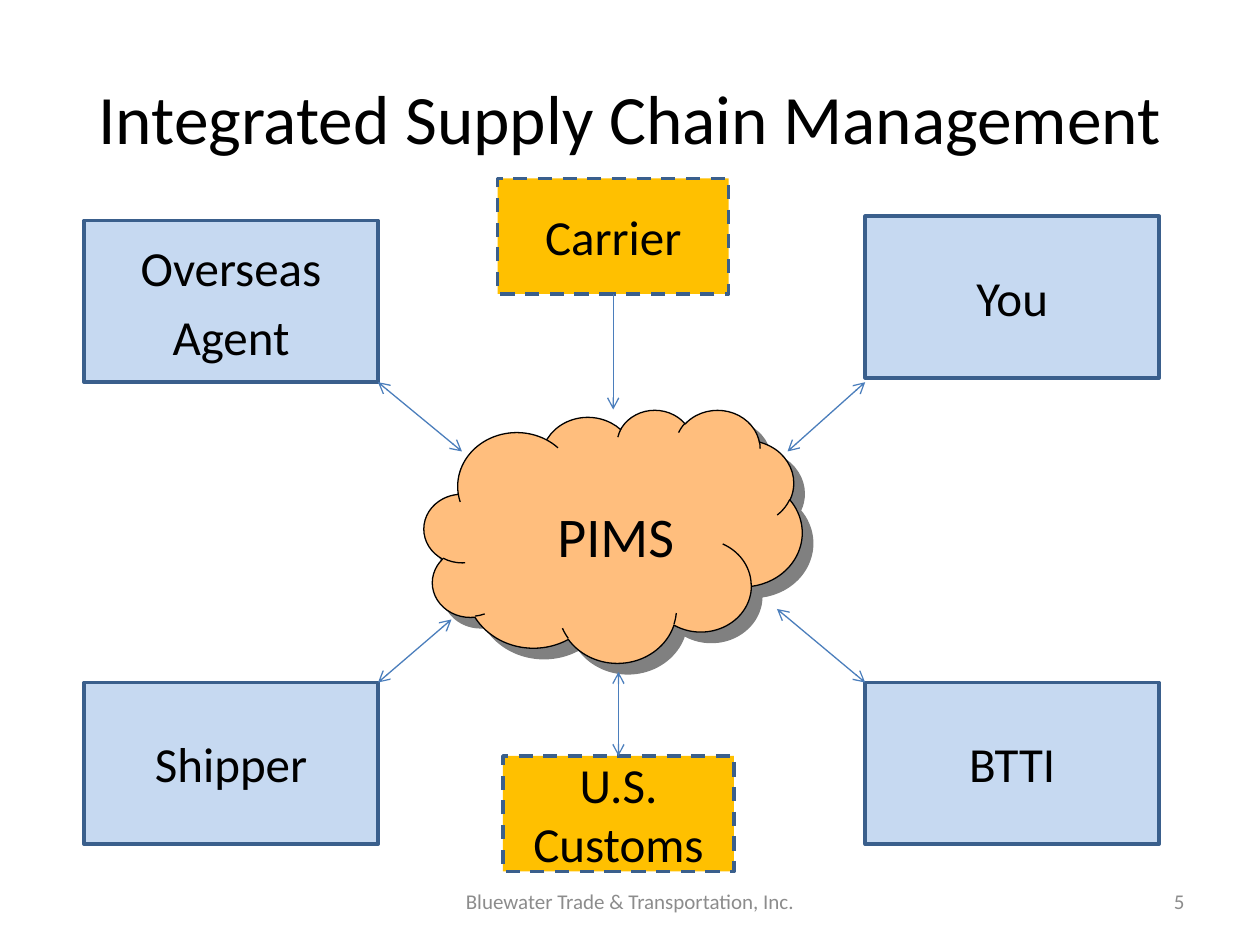
from dataclasses import dataclass
from typing import Optional

from lxml.etree import SubElement
from pptx import Presentation
from pptx.dml.color import RGBColor
from pptx.enum.dml import MSO_LINE
from pptx.enum.shapes import MSO_CONNECTOR, MSO_SHAPE
from pptx.enum.text import MSO_ANCHOR, PP_ALIGN as Align
from pptx.oxml.ns import qn
from pptx.util import Inches, Pt

COLUMNS, ROWS = 120, 90
TOP, BOTTOM = 0, 2


@dataclass(frozen=True)
class Theme:
    font: str = "Calibri"
    ink: str = "000000"
    muted: str = "8C8C8C"
    partner: str = "C6D9F1"
    outside: str = "FFC000"
    border: str = "3A5F8C"
    arrow: str = "4B7EBC"
    cloud: str = "FFBE7D"
    shadow: str = "808080"
    title_size: float = 39.6
    hub_size: float = 32
    box_size: float = 28
    footer_size: float = 12
    border_width: float = 2
    thin_width: float = 0.75


@dataclass(frozen=True)
class Area:
    """A rectangle in grid columns and rows."""
    column: float
    row: float
    width: float
    height: float


@dataclass(frozen=True)
class Party:
    lines: tuple[str, ...]
    area: Area
    outside: bool = False


@dataclass(frozen=True)
class Link:
    """An arrow from a party to the cloud, in grid columns and rows."""
    start: tuple[float, float]
    end: tuple[float, float]
    both_ways: bool = True
    party: Optional[str] = None
    side: int = TOP


@dataclass(frozen=True)
class Caption:
    text: str
    area: Area
    size: float
    color: str
    align: Align = Align.CENTER
    anchor: MSO_ANCHOR = MSO_ANCHOR.MIDDLE


THEME = Theme()
LEFT, RIGHT, LOWER = 8, 82.4, 65
PARTNER_WIDTH, PARTNER_HEIGHT = 28, 15.4
CLOUD = Area(40.4, 39, 36, 24.1)

PARTIES = (
    Party(("You",), Area(RIGHT, 20.6, PARTNER_WIDTH, PARTNER_HEIGHT)),
    Party(("Overseas", "Agent"), Area(LEFT, 21, PARTNER_WIDTH, PARTNER_HEIGHT)),
    Party(("Shipper",), Area(LEFT, LOWER, PARTNER_WIDTH, PARTNER_HEIGHT)),
    Party(("BTTI",), Area(RIGHT, LOWER, PARTNER_WIDTH, PARTNER_HEIGHT)),
    Party(("Carrier",), Area(47.4, 17, 22, 11), outside=True),
    Party(("U.S. Customs",), Area(47.9, 72, 22, 11), outside=True),
)
LINKS = (
    Link((58.4, 28), (58.4, 39), both_ways=False, party="Carrier", side=BOTTOM),
    Link((58.9, 72), (58.9, 64), party="U.S. Customs", side=TOP),
    Link((36, LOWER), (43, 59)),
    Link((36, 36.4), (44, 43)),
    Link((RIGHT, LOWER), (74, 58)),
    Link((RIGHT, 36.4), (75, 43)),
)
CAPTIONS = (
    Caption("PIMS", Area(47.9, 47.2, 21.5, 7.7), THEME.hub_size, THEME.ink,
            anchor=MSO_ANCHOR.TOP),
    Caption("5", Area(86, 83.4, 28, 4.8), THEME.footer_size, THEME.muted, Align.RIGHT),
    Caption("Bluewater Trade & Transportation, Inc.", Area(41, 83.4, 38, 4.8),
            THEME.footer_size, THEME.muted),
)

deck = Presentation()
deck.slide_width, deck.slide_height = Inches(10), Inches(7.5)
page = deck.slides.add_slide(deck.slide_layouts[5])


def point(column: float, row: float) -> tuple[int, int]:
    return (round(deck.slide_width * column / COLUMNS),
            round(deck.slide_height * row / ROWS))


def place(area: Area) -> tuple[int, int, int, int]:
    return point(area.column, area.row) + point(area.width, area.height)


def write(shape, lines: tuple[str, ...], size: float, color: str = THEME.ink,
          align: Align = Align.CENTER, anchor: MSO_ANCHOR = MSO_ANCHOR.MIDDLE,
          space: float = 0) -> None:
    frame = shape.text_frame
    frame.word_wrap = True
    frame.vertical_anchor = anchor
    frame.text = "\n".join(lines)
    for para in frame.paragraphs:
        para.alignment = align
        para.space_before = Pt(space)
        span = para.runs[0]
        for name, value in {"name": THEME.font, "size": Pt(size)}.items():
            setattr(span.font, name, value)
        span.font.color.rgb = RGBColor.from_string(color)


def paint(shape, fill: str, line: str, width: float) -> None:
    shape.shadow.inherit = False
    shape.fill.solid()
    shape.fill.fore_color.rgb = RGBColor.from_string(fill)
    shape.line.color.rgb = RGBColor.from_string(line)
    shape.line.width = Pt(width)


def draw_cloud(area: Area) -> None:
    cloud = page.shapes.add_shape(MSO_SHAPE.CLOUD, *place(area))
    paint(cloud, THEME.cloud, THEME.ink, THEME.thin_width)
    effects = cloud._element.spPr.find(qn("a:effectLst"))
    shadow = SubElement(effects, qn("a:outerShdw"), dist=str(Pt(8.5)),
                        dir=str(45 * 60000), algn="ctr", rotWithShape="0")
    SubElement(shadow, qn("a:srgbClr"), val=THEME.shadow)


def draw_party(party: Party):
    box = page.shapes.add_shape(MSO_SHAPE.RECTANGLE, *place(party.area))
    fill = THEME.outside if party.outside else THEME.partner
    paint(box, fill, THEME.border, THEME.border_width)
    if party.outside:
        box.line.dash_style = MSO_LINE.DASH
    write(box, party.lines, THEME.box_size, space=THEME.box_size * 0.2)
    return box


def draw_link(link: Link, boxes: dict) -> None:
    arrow = page.shapes.add_connector(
        MSO_CONNECTOR.STRAIGHT, *point(*link.start), *point(*link.end))
    if link.party:
        arrow.begin_connect(boxes[link.party], link.side)
    arrow.line.color.rgb = RGBColor.from_string(THEME.arrow)
    arrow.line.width = Pt(THEME.thin_width)
    outline = arrow.line._get_or_add_ln()
    for tag in ("a:headEnd", "a:tailEnd") if link.both_ways else ("a:tailEnd",):
        SubElement(outline, qn(tag), type="arrow")
    SubElement(arrow._element.spPr, qn("a:effectLst"))


def draw_caption(caption: Caption) -> None:
    box = page.shapes.add_textbox(*place(caption.area))
    write(box, (caption.text,), caption.size, caption.color, caption.align, caption.anchor)


def main() -> None:
    title = page.shapes.title
    title.left, title.top, title.width, title.height = place(Area(6, 3.6, 108, 15))
    write(title, ("Integrated Supply Chain Management",), THEME.title_size)
    draw_cloud(CLOUD)
    boxes = {" ".join(party.lines): draw_party(party) for party in PARTIES}
    for link in LINKS:
        draw_link(link, boxes)
    for caption in CAPTIONS:
        draw_caption(caption)
    deck.save("out.pptx")


if __name__ == "__main__":
    main()
